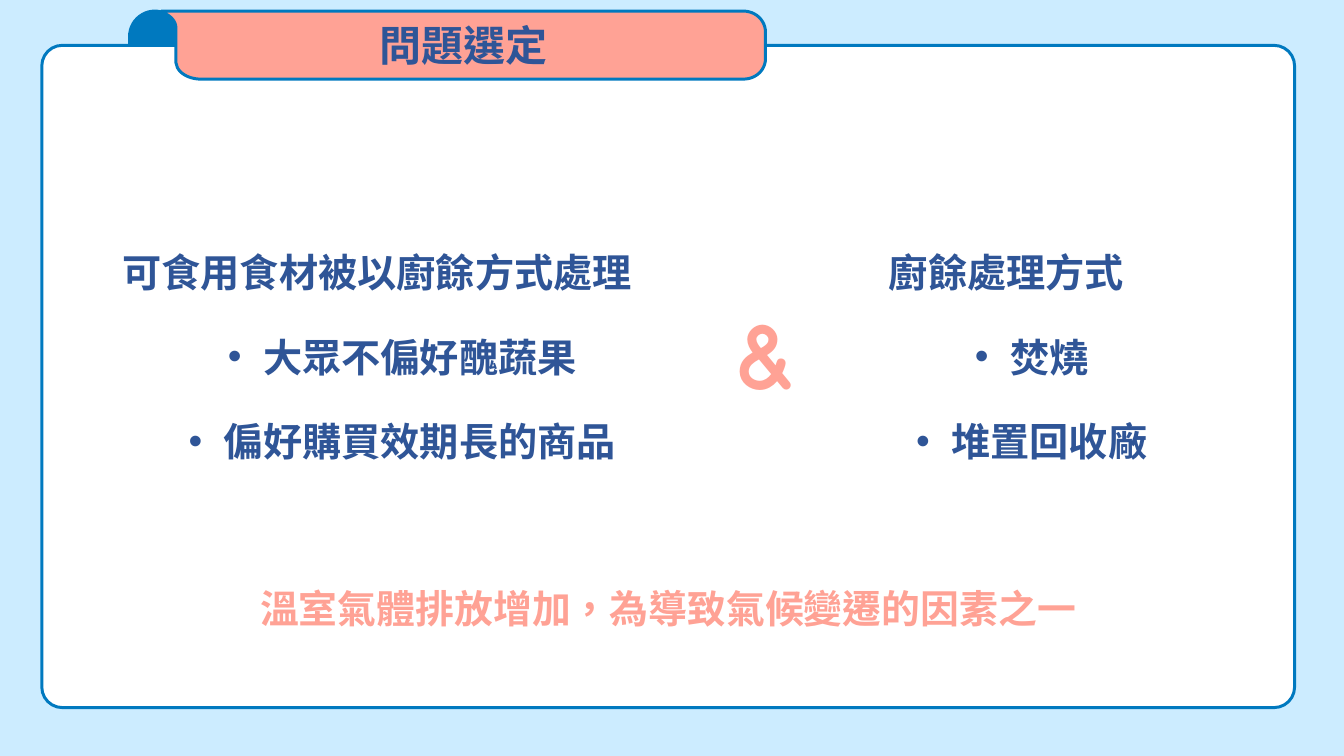
from lxml.etree import SubElement
from pptx import Presentation
from pptx.dml.color import RGBColor
from pptx.enum.shapes import MSO_SHAPE as Preset
from pptx.enum.text import MSO_ANCHOR as Anchor, PP_ALIGN as Align
from pptx.oxml.ns import qn
from pptx.util import Inches, Pt

COLORS = {
    "background": "CCECFF",
    "outline": "0079BF",
    "card": "FFFFFF",
    "accent": "FFA295",
    "text": "2F5597",
}


def paint(shape, fill):
    shape.shadow.inherit = False
    shape.fill.solid()
    shape.fill.fore_color.rgb = RGBColor.from_string(COLORS[fill])
    shape.line.color.rgb = RGBColor.from_string(COLORS["outline"])
    shape.line.width = Pt(4.25)


def write(frame, lines, size, color, font="Lato", inset=0.1, anchor=Anchor.TOP, spacing=None, before=0):
    frame.word_wrap = True
    frame.vertical_anchor = anchor
    frame.margin_left = frame.margin_right = Inches(inset)
    frame.margin_top = frame.margin_bottom = Inches(inset)
    for index, line in enumerate(lines):
        paragraph = frame.add_paragraph() if index else frame.paragraphs[0]
        paragraph.alignment = Align.CENTER
        paragraph.line_spacing = spacing
        paragraph.space_before = Pt(before)
        if index:
            paragraph.level = 1
            properties = paragraph._p.get_or_add_pPr()
            properties.set("marL", str(Inches(1.7)))
            properties.set("indent", str(Inches(-0.7)))
            SubElement(properties, qn("a:buFont")).set("typeface", "Arial")
            SubElement(properties, qn("a:buChar")).set("char", "•")
        run = paragraph.add_run()
        run.text = line
        run.font.name = font
        run.font.size = Pt(size)
        run.font.bold = True
        run.font.color.rgb = RGBColor.from_string(COLORS[color])
        properties = run._r.get_or_add_rPr()
        properties.set("lang", "zh-TW")
        SubElement(properties, qn("a:ea")).set("typeface", font)


presentation = Presentation()
presentation.slide_width = Inches(26.67)
presentation.slide_height = Inches(15)
slide = presentation.slides.add_slide(presentation.slide_layouts[6])
slide.background.fill.solid()
slide.background.fill.fore_color.rgb = RGBColor.from_string(COLORS["background"])

ribbon_fold = slide.shapes.add_shape(
    Preset.ROUND_2_SAME_RECTANGLE, Inches(2.57), Inches(0.22), Inches(1.01), Inches(1.96))
ribbon_fold.adjustments[0] = 0.5
paint(ribbon_fold, "outline")

card = slide.shapes.add_shape(
    Preset.ROUNDED_RECTANGLE, Inches(0.83), Inches(0.9), Inches(24.86), Inches(13.14))
card.adjustments[0] = 0.031
paint(card, "card")

ribbon_path = [
    [(14.75, 0.22)],
    [(15, 0.22), (15.19, 0.41), (15.19, 0.64)],
    [(15.19, 1.16)],
    [(15.19, 1.39), (15, 1.57), (14.75, 1.57)],
    [(3.99, 1.57)],
    [(3.78, 1.57), (3.59, 1.48), (3.52, 1.34)],
    [(3.49, 1.24)],
    [(3.49, 0.55)],
    [(3.49, 0.43), (3.4, 0.33), (3.28, 0.27)],
    [(3.2, 0.25)],
]
steps = 12
start = (3.2, 0.22)
points = [start]
for segment in ribbon_path:
    if len(segment) == 1:
        points += segment
        continue
    curve = [points[-1], *segment]
    for step in range(1, steps + 1):
        t = step / steps
        weights = [(1 - t) ** 3, 3 * t * (1 - t) ** 2, 3 * t**2 * (1 - t), t**3]
        points.append(tuple(sum(w * p[axis] for w, p in zip(weights, curve)) for axis in (0, 1)))
vertices = [(Inches(x), Inches(y)) for x, y in points]
builder = slide.shapes.build_freeform(*vertices[0])
builder.add_line_segments(vertices[1:], close=True)
ribbon = builder.convert_to_shape()
paint(ribbon, "accent")
write(ribbon.text_frame, ["問題選定"], 60, "text", anchor=Anchor.MIDDLE)

columns = [
    (16.27, 7.41, 5.06, ["廚餘處理方式", "焚燒", "堆置回收廠"]),
    (2.05, 10.87, 5.21, ["可食用食材被以廚餘方式處理", "大眾不偏好醜蔬果", "偏好購買效期長的商品"]),
]
for left, width, height, lines in columns:
    column = slide.shapes.add_textbox(Inches(left), Inches(4.36), Inches(width), Inches(height))
    write(column.text_frame, lines, 56, "text", spacing=1.5, before=20)

conclusion = slide.shapes.add_textbox(Inches(4.63), Inches(11.13), Inches(17.27), Inches(1.45))
write(conclusion.text_frame, ["溫室氣體排放增加，為導致氣候變遷的因素之一"], 55.5, "accent", spacing=1.4, before=20)

ampersand = slide.shapes.add_textbox(Inches(11.96), Inches(5.74), Inches(6.47), Inches(2.43))
write(ampersand.text_frame, ["&"], 138, "accent", font="Comic Neue", inset=0.06, anchor=Anchor.MIDDLE)

presentation.save("out.pptx")
